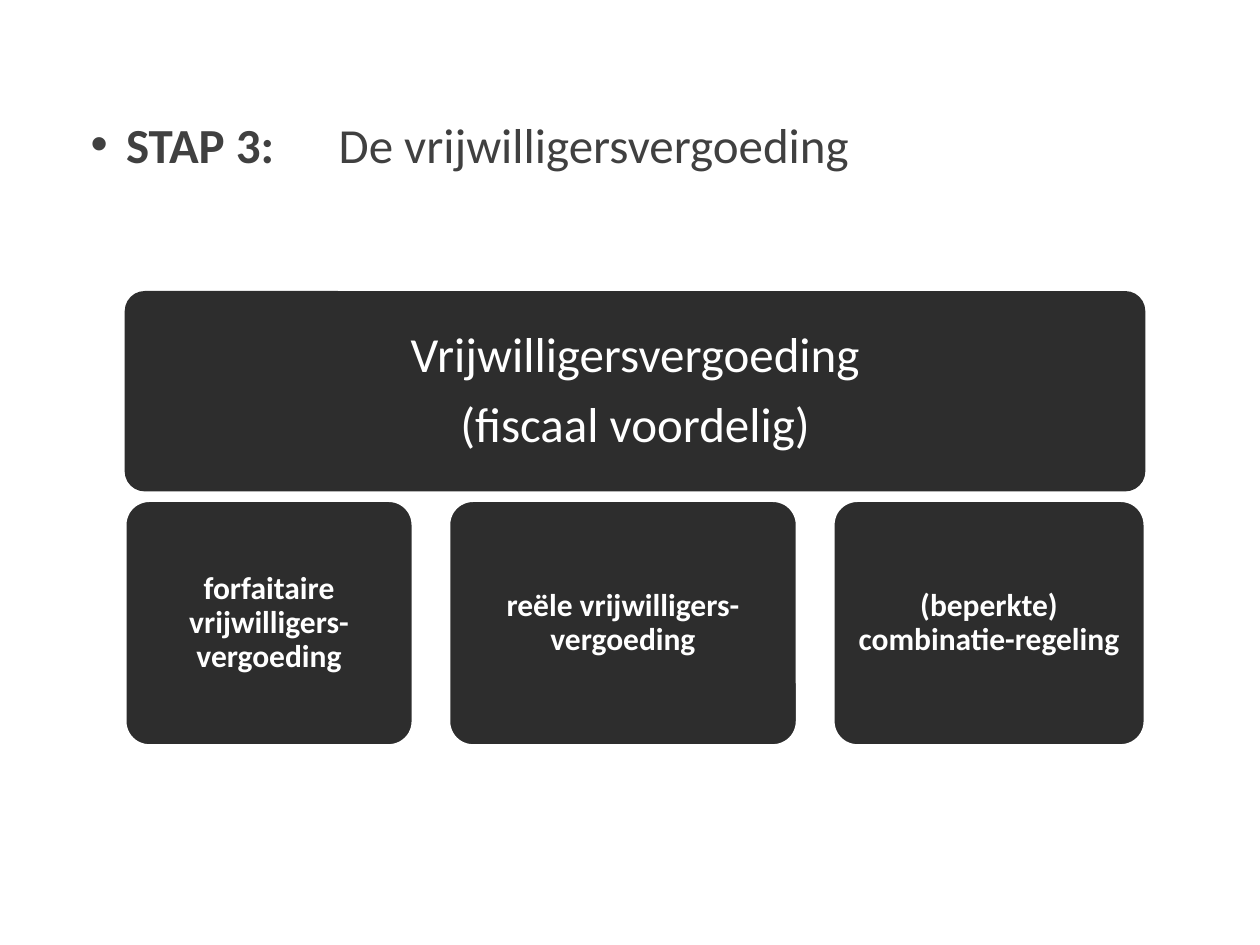
from pptx import Presentation
from pptx.dml.color import RGBColor
from pptx.enum.shapes import MSO_SHAPE
from pptx.enum.text import MSO_ANCHOR, PP_ALIGN
from pptx.util import Inches, Pt

WHITE = RGBColor(0xFF, 0xFF, 0xFF)
GRAY = RGBColor(0x40, 0x40, 0x40)
CHARCOAL = RGBColor(0x2D, 0x2D, 0x2D)

WIDTH, HEIGHT = 10, 7.5
LEFT, GAP = 0.99, 0.28


class Deck:
    """Holds the style and the current slide; lengths are in inches."""
    font = "Calibri"

    def __init__(self):
        self.prs = Presentation()
        self.prs.slide_width, self.prs.slide_height = Inches(WIDTH), Inches(HEIGHT)

    def add_slide(self):
        self.s = self.prs.slides.add_slide(self.prs.slide_layouts[1])
        title = self.s.shapes.title
        title.element.getparent().remove(title.element)
        self.s.background.fill.solid()
        self.s.background.fill.fore_color.rgb = WHITE

    def style(self, p, size, color):
        p.font.name, p.font.size = self.font, Pt(size)
        p.font.color.rgb = color

    def step(self, label, text, x, y, w, h):
        """Bulleted line with a bold label, in the body placeholder."""
        sp = self.s.placeholders[1]
        sp.left, sp.top, sp.width, sp.height = map(Inches, (x, y, w, h))
        p = sp.text_frame.paragraphs[0]
        self.style(p, 28, GRAY)
        p.space_before = Pt(4)
        pPr = p._p.get_or_add_pPr()
        pPr.set("marL", str(Inches(0.4)))
        pPr.set("indent", str(Inches(-0.28)))
        for words, bold in ((label + "\t", True), (" " + text, False)):
            r = p.add_run()
            r.text, r.font.bold = words, bold

    def box(self, lines, x, y, w, h, size, inset, bold=False, outlined=True):
        sp = self.s.shapes.add_shape(MSO_SHAPE.ROUNDED_RECTANGLE,
                                     *map(Inches, (x, y, w, h)))
        sp.adjustments[0] = 0.1
        sp.shadow.inherit = False
        sp.fill.solid()
        sp.fill.fore_color.rgb = CHARCOAL
        if outlined:
            sp.line.color.rgb, sp.line.width = WHITE, Pt(2)
        else:
            sp.line.fill.background()
        tf = sp.text_frame
        tf.word_wrap, tf.vertical_anchor = True, MSO_ANCHOR.MIDDLE
        tf.margin_left = tf.margin_right = Inches(inset)
        tf.margin_top = tf.margin_bottom = Inches(inset)
        tf.text = "\n".join(lines)
        for p in tf.paragraphs:
            self.style(p, size, WHITE)
            p.font.bold = bold
            p.alignment, p.line_spacing = PP_ALIGN.CENTER, 0.9
            p.space_after = Pt(0.35 * size)


def main():
    deck = Deck()
    deck.add_slide()
    deck.step("STAP 3:", "De vrijwilligersvergoeding", 0.5, 0.86, 9.19, 5.71)
    deck.box(["Vrijwilligersvergoeding", "(fiscaal voordelig)"],
             LEFT, 2.31, 8.1, 1.59, 28, 0.12, outlined=False)
    x = LEFT
    for text, w in (("forfaitaire vrijwilligers-vergoeding", 2.29),
                    ("reële vrijwilligers-vergoeding", 2.77),
                    ("(beperkte) combinatie-regeling", 2.48)):
        deck.box([text], x, 3.97, w, 1.95, 18, 0.07, bold=True)
        x += w + GAP
    deck.prs.save("out.pptx")


if __name__ == "__main__":
    main()
